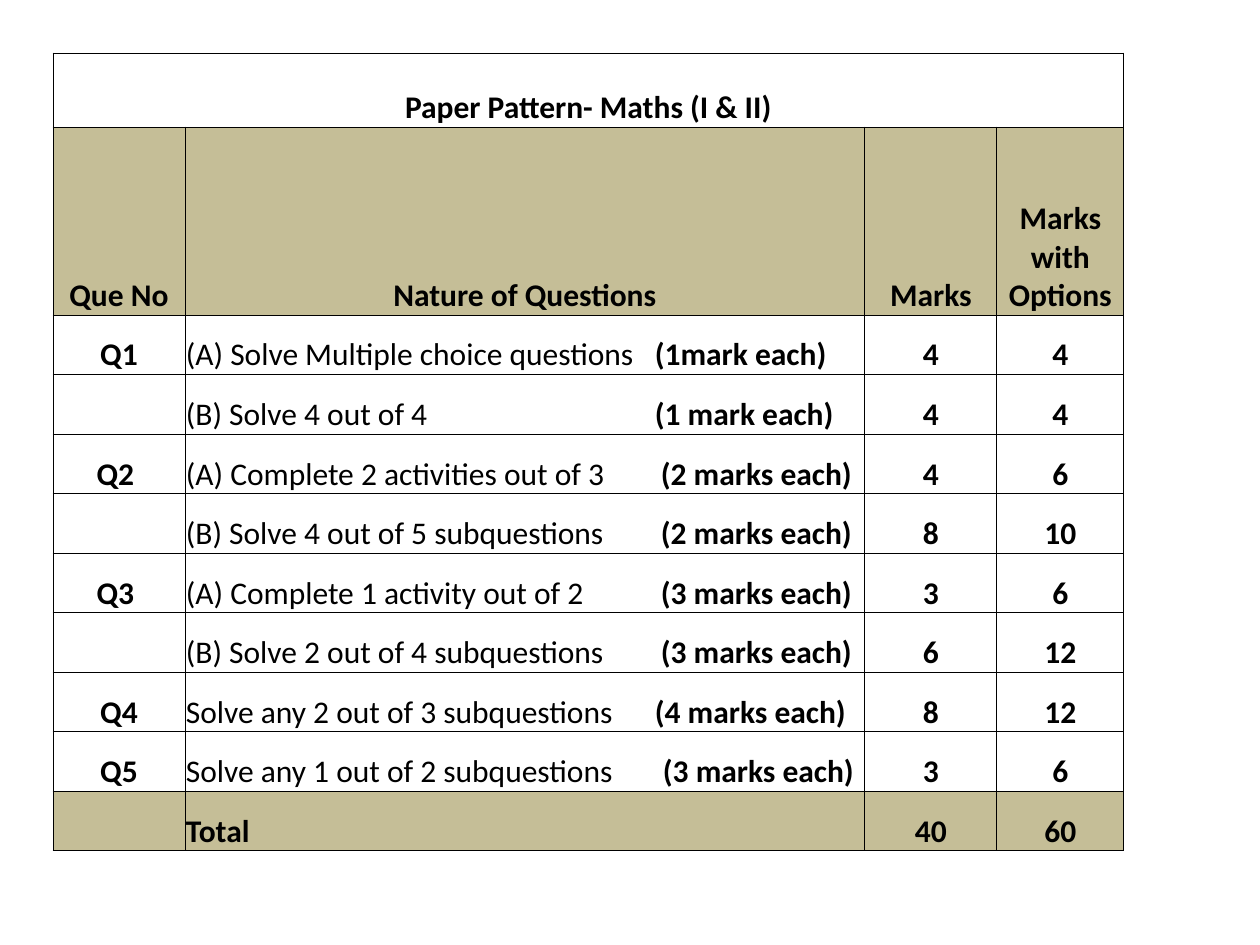
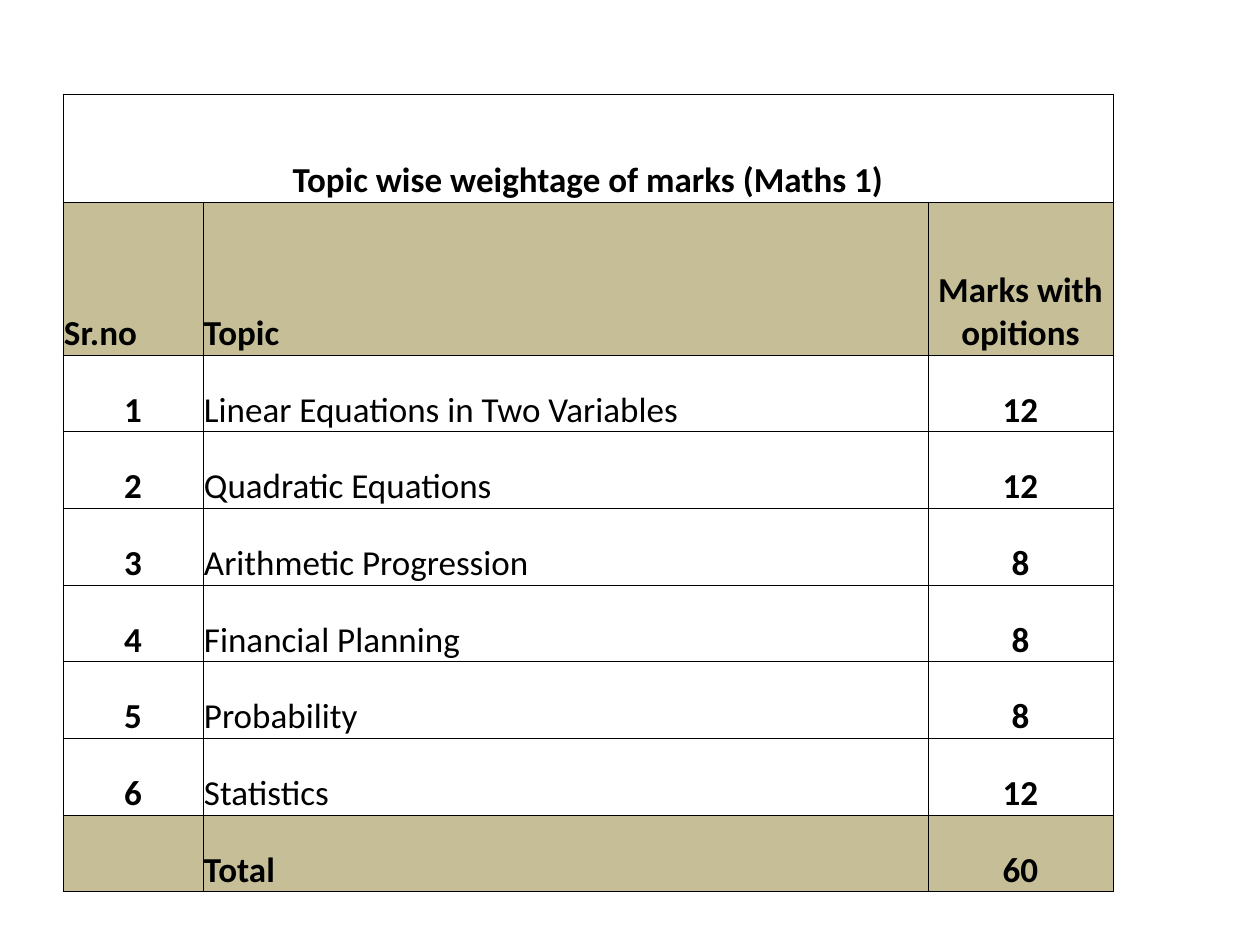
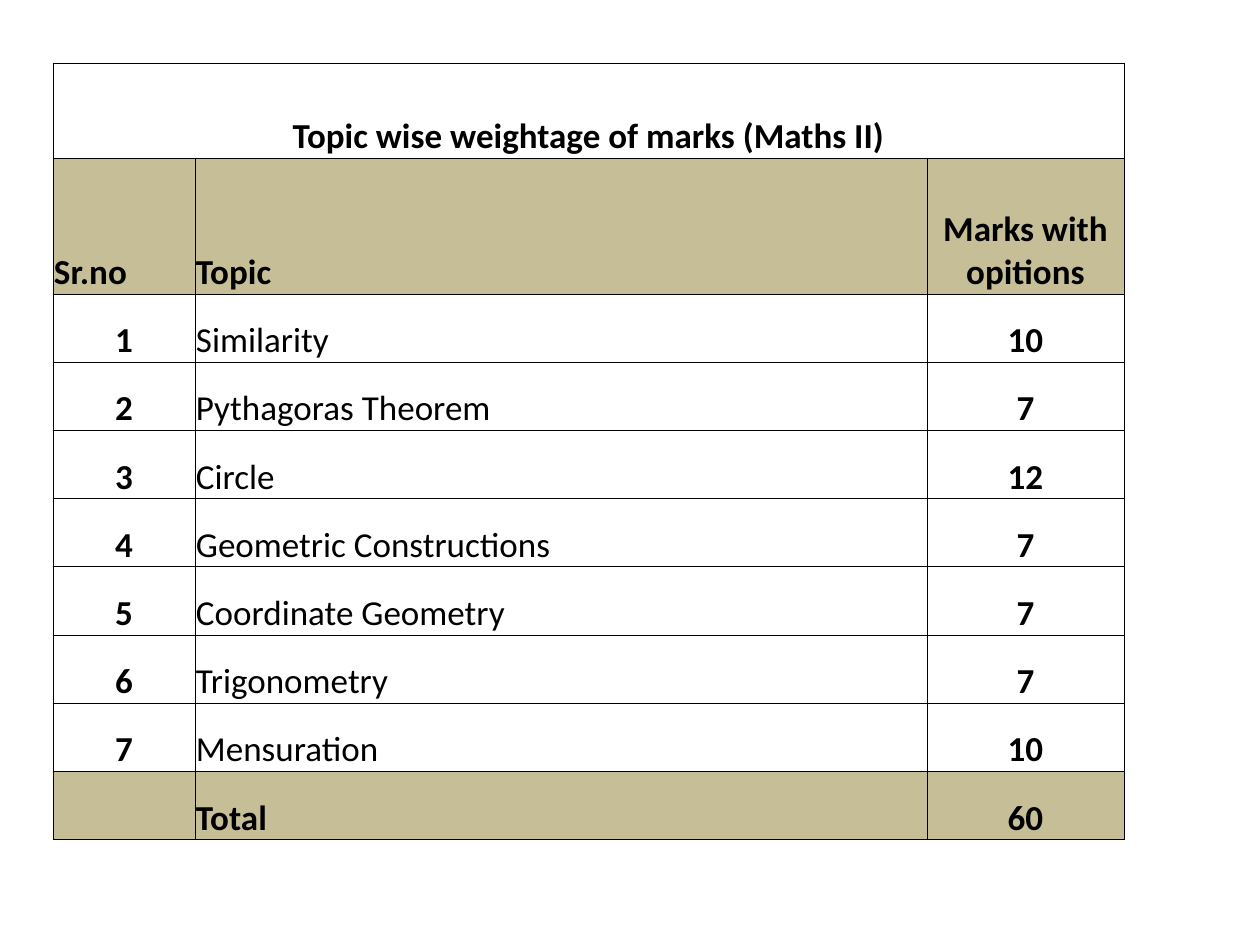
from lxml import etree
from pptx import Presentation
from pptx import util as u
from pptx.dml.color import RGBColor
from pptx.enum import text
from pptx.oxml import ns

PX = 914400 / 126
HUE = {"ink": "000000", "band": "C5BE97"}
FONT = "Calibri"


def put(cell, words, size=18, bold=True, left=False, stop=0):
    para = cell.text_frame.paragraphs[0]
    para.alignment = text.PP_ALIGN.LEFT if left else text.PP_ALIGN.CENTER
    if stop:
        tabs = etree.SubElement(para._p.get_or_add_pPr(), ns.qn("a:tabLst"))
        etree.SubElement(tabs, ns.qn("a:tab"), pos=str(round(stop * PX)), algn="l")
    lead, tab, tail = words.partition("\t")
    for part, heavy in ((lead + tab, bold), (tail, True)):
        if part:
            run = para.add_run()
            run.text = part
            run.font.name = FONT
            run.font.size = u.Pt(size)
            run.font.bold = heavy
            run.font.color.rgb = RGBColor.from_string(HUE["ink"])


def dress(cell, band):
    cell.vertical_anchor = text.MSO_ANCHOR.BOTTOM
    cell.margin_left = cell.margin_right = cell.margin_top = round(PX)
    cell.margin_bottom = 0
    props = cell._tc.get_or_add_tcPr()
    for side in ("lnL", "lnR", "lnT", "lnB"):
        line = etree.SubElement(props, ns.qn("a:" + side), w=str(u.Pt(0.5)))
        fill = etree.SubElement(line, ns.qn("a:solidFill"))
        etree.SubElement(fill, ns.qn("a:srgbClr"), val=HUE["ink"])
    if band:
        cell.fill.solid()
        cell.fill.fore_color.rgb = RGBColor.from_string(HUE["band"])
    else:
        cell.fill.background()


TOPIC = ("Sr.no", "Topic", "Marks with opitions")
PAGES = [
    dict(
        title="Paper Pattern- Maths (I & II)",
        box=(53, 53, 798), cols=(132, 680, 132, 127), tops=(74, 188),
        size=18, lefts=(),
        stops=(469, 469, 475, 475, 475, 475, 469, 477),
        rows=[
            ("Que No", "Nature of Questions", "Marks", "Marks with Options"),
            ("Q1", "(A) Solve Multiple choice questions\t(1mark each)", "4", "4"),
            ("", "(B) Solve 4 out of 4\t(1 mark each)", "4", "4"),
            ("Q2 ", "(A) Complete 2 activities out of 3\t(2 marks each)", "4", "6"),
            ("", "(B) Solve 4 out of 5 subquestions\t(2 marks each)", "8", "10"),
            ("Q3 ", "(A) Complete 1 activity out of 2\t(3 marks each)", "3", "6"),
            ("", "(B) Solve 2 out of 4 subquestions\t(3 marks each)", "6", "12"),
            ("Q4", "Solve any 2 out of 3 subquestions\t(4 marks each)", "8", "12"),
            ("Q5", "Solve any 1 out of 2 subquestions\t(3 marks each)", "3", "6"),
            ("", "Total", "40", "60"),
        ],
    ),
    dict(
        title="Topic wise weightage of marks (Maths 1)",
        box=(63, 94, 798), cols=(140, 725, 185), tops=(108, 153),
        size=20, lefts=(0, 1), stops=(),
        rows=[
            TOPIC,
            ("1", "Linear Equations in Two Variables", "12"),
            ("2", "Quadratic Equations", "12"),
            ("3", "Arithmetic Progression", "8"),
            ("4", "Financial Planning", "8"),
            ("5", "Probability", "8"),
            ("6", "Statistics", "12"),
            ("", "Total", "60"),
        ],
    ),
    dict(
        title="Topic wise weightage of marks (Maths II)",
        box=(53, 63, 777), cols=(142, 732, 197), tops=(95, 136),
        size=20, lefts=(0, 1), stops=(),
        rows=[
            TOPIC,
            ("1", "Similarity", "10"),
            ("2", "Pythagoras Theorem", "7"),
            ("3", "Circle", "12"),
            ("4", "Geometric Constructions", "7"),
            ("5", "Coordinate Geometry", "7"),
            ("6", "Trigonometry", "7"),
            ("7", "Mensuration", "10"),
            ("", "Total", "60"),
        ],
    ),
]

deck = Presentation()
deck.slide_width = round(1260 * PX)
deck.slide_height = round(945 * PX)

for page in PAGES:
    slide = deck.slides.add_slide(deck.slide_layouts[6])
    x, y, tall = page["box"]
    cols, tops, rows = page["cols"], page["tops"], page["rows"]
    last = len(rows)
    frame = slide.shapes.add_table(
        last + 1, len(cols),
        round(x * PX), round(y * PX), round(sum(cols) * PX), round(tall * PX))
    grid = frame.table
    grid.horz_banding = False
    grid.first_row = False
    for col, wide in zip(grid.columns, cols):
        col.width = round(wide * PX)
    body = (tall - sum(tops)) / (last - 1)
    for r, row in enumerate(grid.rows):
        row.height = round((tops[r] if r < 2 else body) * PX)
        for cell in row.cells:
            dress(cell, r in (1, last))

    grid.cell(0, 0).merge(grid.cell(0, len(cols) - 1))
    put(grid.cell(0, 0), page["title"], size=page["size"])
    for r, row in enumerate(rows, 1):
        for c, words in enumerate(row):
            if words:
                inner = 1 < r < last and c == 1
                put(grid.cell(r, c), words, size=page["size"], bold=not inner,
                    left=c in page["lefts"] if r == 1 else c == 1,
                    stop=page["stops"][r - 2] if inner and page["stops"] else 0)

deck.save("out.pptx")
